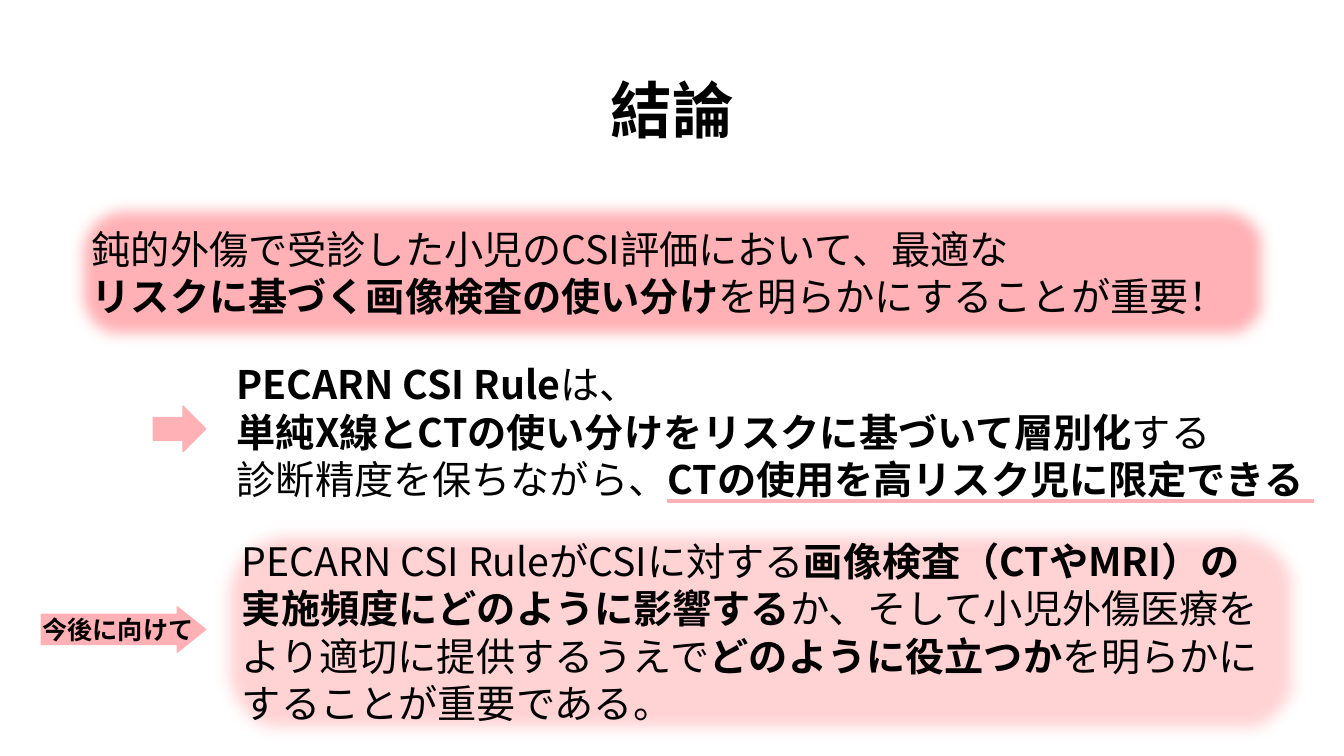
from lxml import etree
from pptx import Presentation
from pptx.dml.color import RGBColor
from pptx.enum.shapes import MSO_CONNECTOR, MSO_SHAPE
from pptx.enum.text import MSO_ANCHOR, PP_ALIGN
from pptx.oxml.ns import qn
from pptx.util import Inches, Pt

ARROW = MSO_SHAPE.RIGHT_ARROW
ROUND = MSO_SHAPE.ROUNDED_RECTANGLE
STRAIGHT = MSO_CONNECTOR.STRAIGHT
TOP, MIDDLE = MSO_ANCHOR.TOP, MSO_ANCHOR.MIDDLE
LEFT, CENTER = PP_ALIGN.LEFT, PP_ALIGN.CENTER
FONT = "Noto Sans CJK JP"
COLORS = {"pink": "FFB1B5", "ink": "000000"}


def color(name):
    return RGBColor.from_string(COLORS[name])


def write(frame, lines, size=28, align=LEFT, anchor=TOP, spacing=Pt(34), wrap=True):
    frame.word_wrap = wrap
    frame.vertical_anchor = anchor
    for i, line in enumerate(lines):
        para = frame.paragraphs[0] if i == 0 else frame.add_paragraph()
        para.alignment = align
        para.line_spacing = spacing
        for text, bold in line:
            run = para.add_run()
            run.text = text
            font = run.font
            font.name, font.size, font.bold = FONT, Pt(size), bold
            font.color.rgb = color("ink")
            props = run._r.get_or_add_rPr()
            etree.SubElement(props, qn("a:ea"), typeface=FONT)


def add_text(slide, box, lines, **style):
    shape = slide.shapes.add_textbox(*map(Inches, box))
    write(shape.text_frame, lines, **style)


def add_pink(slide, kind, box, adjust=()):
    shape = slide.shapes.add_shape(kind, *map(Inches, box))
    shape.shadow.inherit = False
    for i, value in enumerate(adjust):
        shape.adjustments[i] = value
    shape.fill.solid()
    shape.fill.fore_color.rgb = color("pink")
    shape.line.color.rgb = color("pink")
    shape.line.width = Pt(1)
    return shape


def add_panel(slide, box, lines, alpha=100):
    shape = add_pink(slide, ROUND, box, [0.243])
    props = shape._element.spPr
    if alpha < 100:
        tint = props.find(qn("a:solidFill")).find(qn("a:srgbClr"))
        etree.SubElement(tint, qn("a:alpha"), val=str(alpha * 1000))
    effects = props.find(qn("a:effectLst"))
    etree.SubElement(effects, qn("a:softEdge"), rad=str(Pt(10)))
    write(shape.text_frame, lines, anchor=MIDDLE)


def add_rule(slide, left, right, y):
    rule = slide.shapes.add_connector(
        STRAIGHT, Inches(left), Inches(y), Inches(right), Inches(y))
    rule.line.color.rgb = color("pink")
    rule.line.width = Pt(3)
    etree.SubElement(rule._element.spPr, qn("a:effectLst"))


def main():
    deck = Presentation()
    deck.slide_width, deck.slide_height = Inches(13.33), Inches(7.5)
    slide = deck.slides.add_slide(deck.slide_layouts[6])

    add_text(slide, (0.92, 0.4, 11.5, 1.45), [[("結論", True)]],
             size=44, align=CENTER, anchor=MIDDLE, spacing=0.9)
    add_text(slide, (2.25, 3.52, 11.09, 1.45), [
        [("PECARN CSI Rule", True), ("は、", False)],
        [("単純X線とCTの使い分けをリスクに基づいて層別化", True), ("する", False)],
        [("診断精度を保ちながら、", False), ("CTの使用を高リスク児に限定できる", True)],
    ])
    add_pink(slide, ARROW, (1.52, 4.03, 0.52, 0.45))
    add_rule(slide, 6.62, 13.03, 4.97)
    add_panel(slide, (2.15, 5.2, 10.77, 2.13), [[
        ("PECARN CSI RuleがCSIに対する", False),
        ("画像検査（CTやMRI）の実施頻度にどのように影響する", True),
        ("か、そして小児外傷医療をより適切に提供するうえで", False),
        ("どのように役立つか", True),
        ("を明らかにすることが重要である。", False),
    ]], alpha=56)
    add_pink(slide, ARROW, (0.41, 6.02, 1.63, 0.45), [0.664, 0.623])
    add_text(slide, (0.32, 6.04, 1.72, 0.4), [[("今後に向けて", True)]],
             size=18, spacing=Pt(22), wrap=False)
    add_panel(slide, (0.71, 1.98, 11.91, 1.44), [
        [("鈍的外傷で受診した小児のCSI評価において、最適な", False)],
        [("リスクに基づく画像検査の使い分け", True), ("を明らかにすることが重要！", False)],
    ])
    deck.save("out.pptx")


if __name__ == "__main__":
    main()
